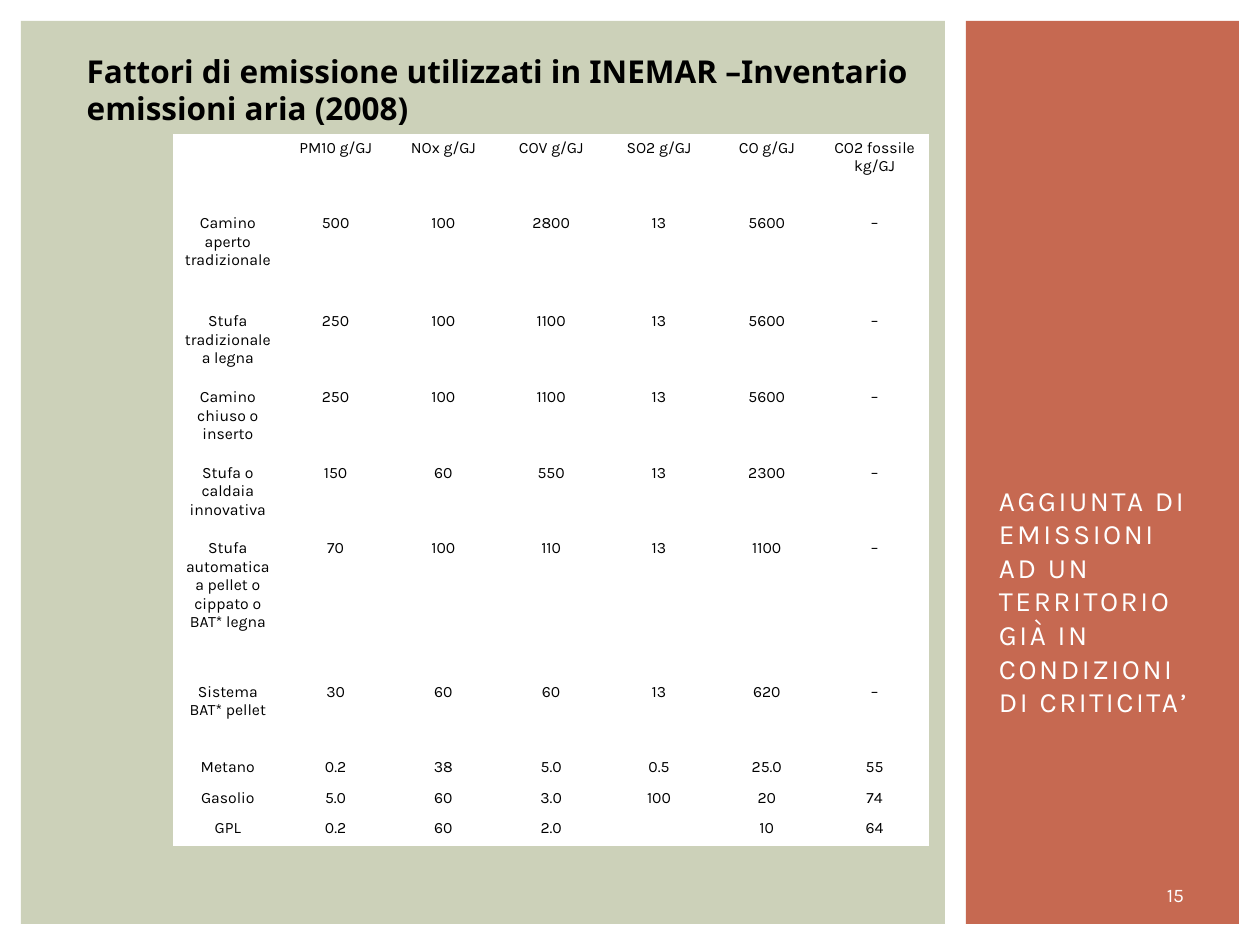
from lxml.etree import SubElement
from pptx import Presentation
from pptx.dml.color import RGBColor
from pptx.enum.shapes import MSO_SHAPE
from pptx.enum.text import MSO_ANCHOR, PP_ALIGN
from pptx.oxml.ns import qn
from pptx.util import Inches, Pt

WHITE = RGBColor(0xFF, 0xFF, 0xFF)
BLACK = RGBColor(0x00, 0x00, 0x00)
SAGE = RGBColor(0xCC, 0xD1, 0xB9)
TERRACOTTA = RGBColor(0xC6, 0x69, 0x51)

presentation = Presentation()
presentation.slide_width = Inches(10)
presentation.slide_height = Inches(7.5)
slide = presentation.slides.add_slide(presentation.slide_layouts[6])
slide.background.fill.solid()
slide.background.fill.fore_color.rgb = SAGE


def box(left, top, width, height):
    """Turn percentages of the slide's size into lengths."""
    across = presentation.slide_width / 100
    down = presentation.slide_height / 100
    return (round(left * across), round(top * down),
            round(width * across), round(height * down))


def write(text_frame, text, size, font_name, color, alignment):
    text_frame.word_wrap = True
    text_frame.text = text
    paragraph = text_frame.paragraphs[0]
    paragraph.alignment = alignment
    for run in paragraph.runs:
        run.font.size = Pt(size)
        run.font.name = font_name
        run.font.color.rgb = color
    return paragraph


# White frame with the content panel and the side panel
panels = [
    (WHITE, (0, 0, 100, 100)),
    (TERRACOTTA, (76.67, 2.22, 21.67, 95.56)),
    (SAGE, (1.67, 2.22, 73.33, 95.56)),
]
for color, area in panels:
    panel = slide.shapes.add_shape(MSO_SHAPE.RECTANGLE, *box(*area))
    panel.shadow.inherit = False
    panel.fill.solid()
    panel.fill.fore_color.rgb = color
    panel.line.fill.background()

# Side panel: page number and title
page_number = slide.shapes.add_textbox(*box(90.1, 92.67, 6.4, 4)).text_frame
page_number.vertical_anchor = MSO_ANCHOR.MIDDLE
write(page_number, "15", 11, "Karla", WHITE, PP_ALIGN.CENTER)

side_title = slide.shapes.add_textbox(*box(78.3, 52.27, 18.3, 24.4)).text_frame
side_title.vertical_anchor = MSO_ANCHOR.BOTTOM
paragraph = write(
    side_title,
    "AGGIUNTA DI EMISSIONI AD UN TERRITORIO GIÀ IN CONDIZIONI DI CRITICITA’",
    16, "Karla", WHITE, PP_ALIGN.LEFT)
paragraph.runs[0].font._element.set("spc", "150")

# Emission factors: row height in percent of the slide, then the cells
emission_rows = [
    (8, ["", "PM10 g/GJ", "NOx g/GJ", "COV g/GJ", "SO2 g/GJ", "CO g/GJ",
         "CO2 fossile kg/GJ"]),
    (10.4, ["Camino aperto tradizionale", "500", "100", "2800", "13", "5600", "–"]),
    (8, ["Stufa tradizionale a legna", "250", "100", "1100", "13", "5600", "–"]),
    (8, ["Camino chiuso o inserto", "250", "100", "1100", "13", "5600", "–"]),
    (8, ["Stufa o caldaia innovativa", "150", "60", "550", "13", "2300", "–"]),
    (15.2, ["Stufa automatica a pellet o cippato o BAT* legna",
            "70", "100", "110", "13", "1100", "–"]),
    (8, ["Sistema BAT* pellet", "30", "60", "60", "13", "620", "–"]),
    (3.2, ["Metano", "0.2", "38", "5.0", "0.5", "25.0", "55"]),
    (3.2, ["Gasolio", "5.0", "60", "3.0", "100", "20", "74"]),
    (3.2, ["GPL", "0.2", "60", "2.0", "", "10", "64"]),
]
table_height = sum(height for height, _ in emission_rows)
table = slide.shapes.add_table(
    len(emission_rows), len(emission_rows[0][1]),
    *box(13.8, 14.27, 59.9, table_height)).table
table.first_row = False
table.horz_banding = False

for row_index, (height, values) in enumerate(emission_rows):
    table.rows[row_index].height = box(0, 0, 0, height)[3]
    for column_index, value in enumerate(values):
        cell = table.cell(row_index, column_index)
        cell.fill.solid()
        cell.fill.fore_color.rgb = WHITE
        cell.margin_left = cell.margin_right = Inches(0.05)
        cell.margin_top = cell.margin_bottom = Inches(0.03)
        paragraph = write(cell.text_frame, value, 9, "Karla", BLACK, PP_ALIGN.CENTER)
        if not value:  # keeps an empty cell from stretching its row
            SubElement(paragraph._p, qn("a:endParaRPr")).set("sz", "900")

# Heading above the table
heading = slide.shapes.add_textbox(*box(5.9, 4.8, 71.3, 9.4)).text_frame
paragraph = write(
    heading,
    "Fattori di emissione utilizzati in INEMAR –Inventario emissioni aria (2008)",
    18, "Noto Sans", BLACK, PP_ALIGN.LEFT)
paragraph.runs[0].font.bold = True

presentation.save("out.pptx")
